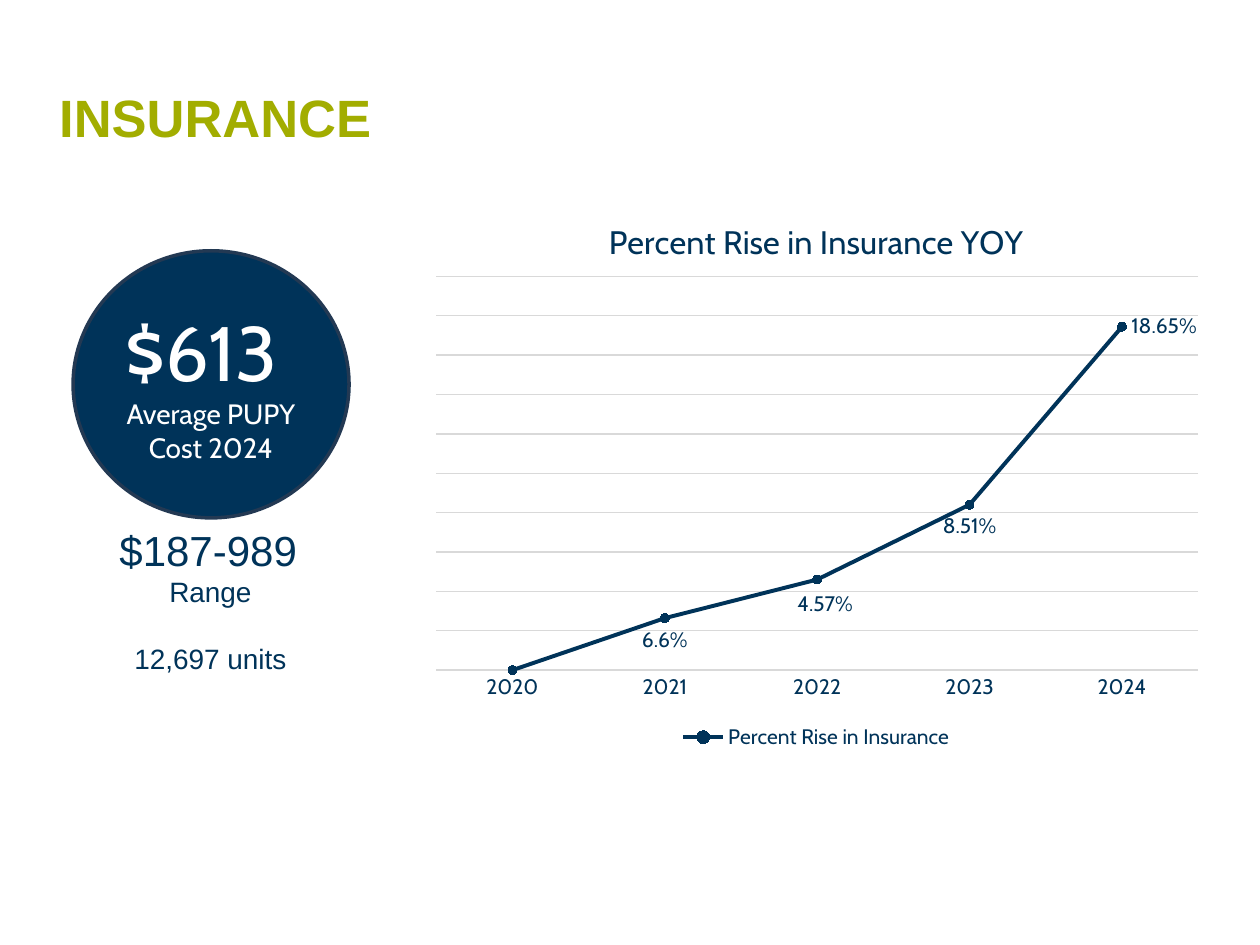
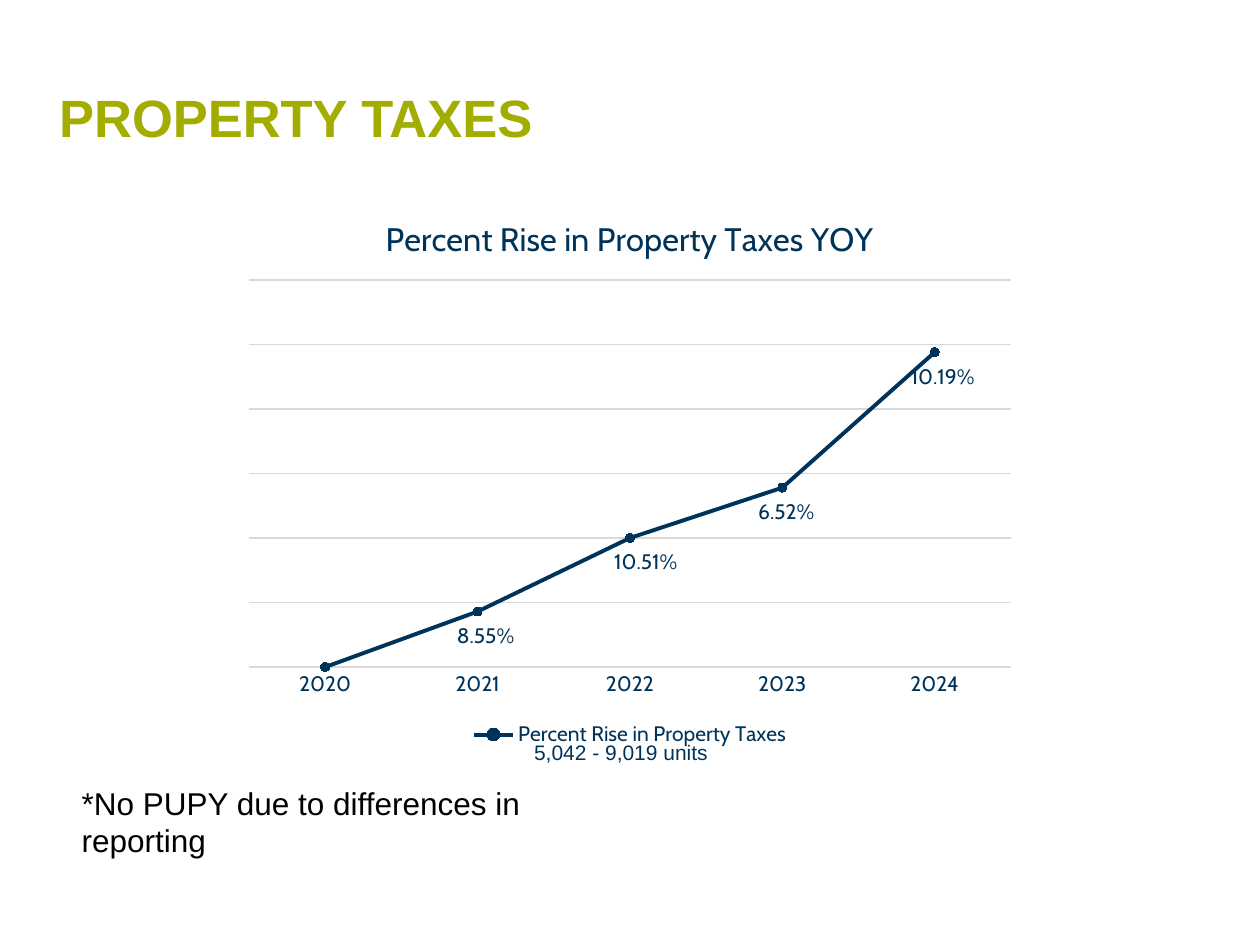
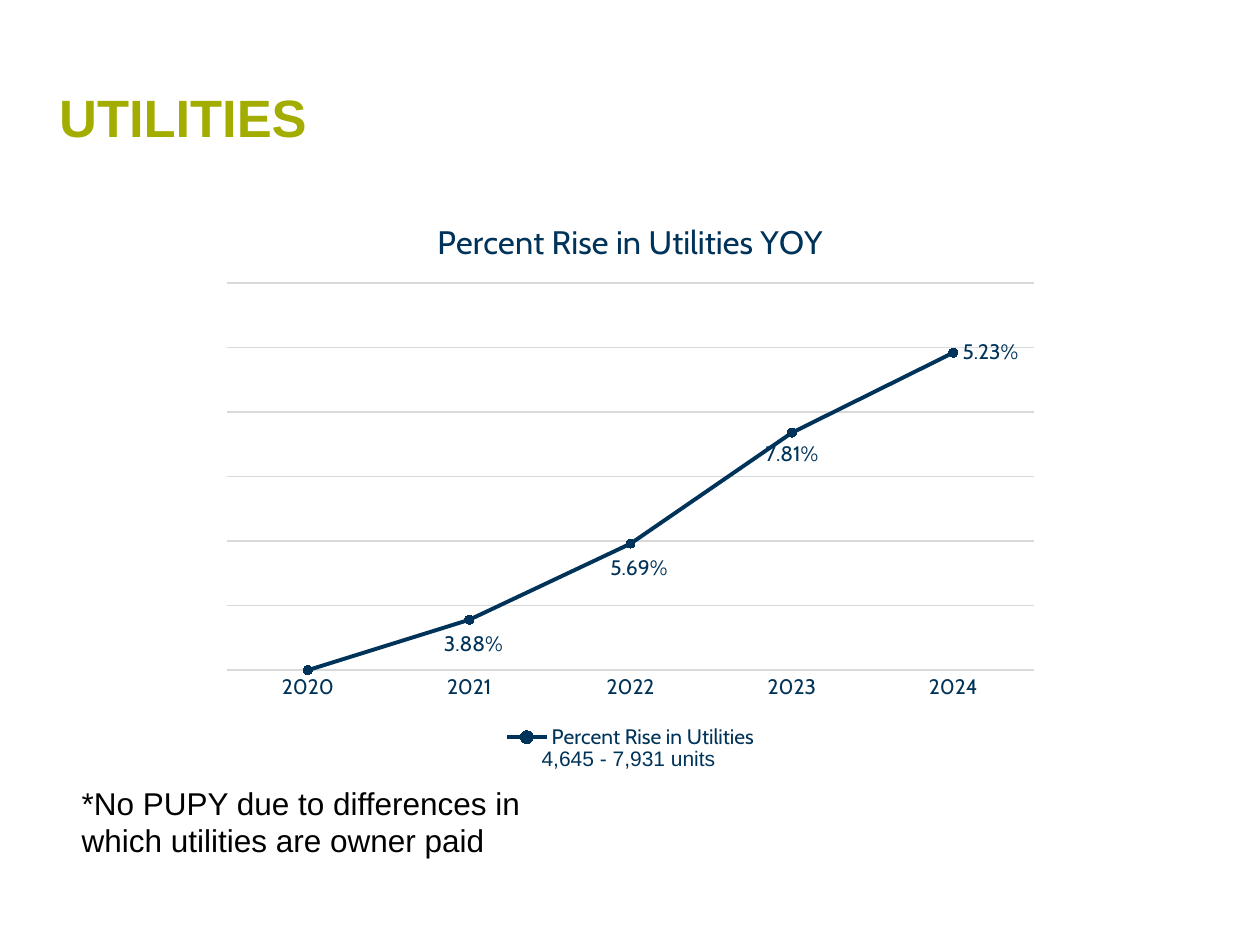
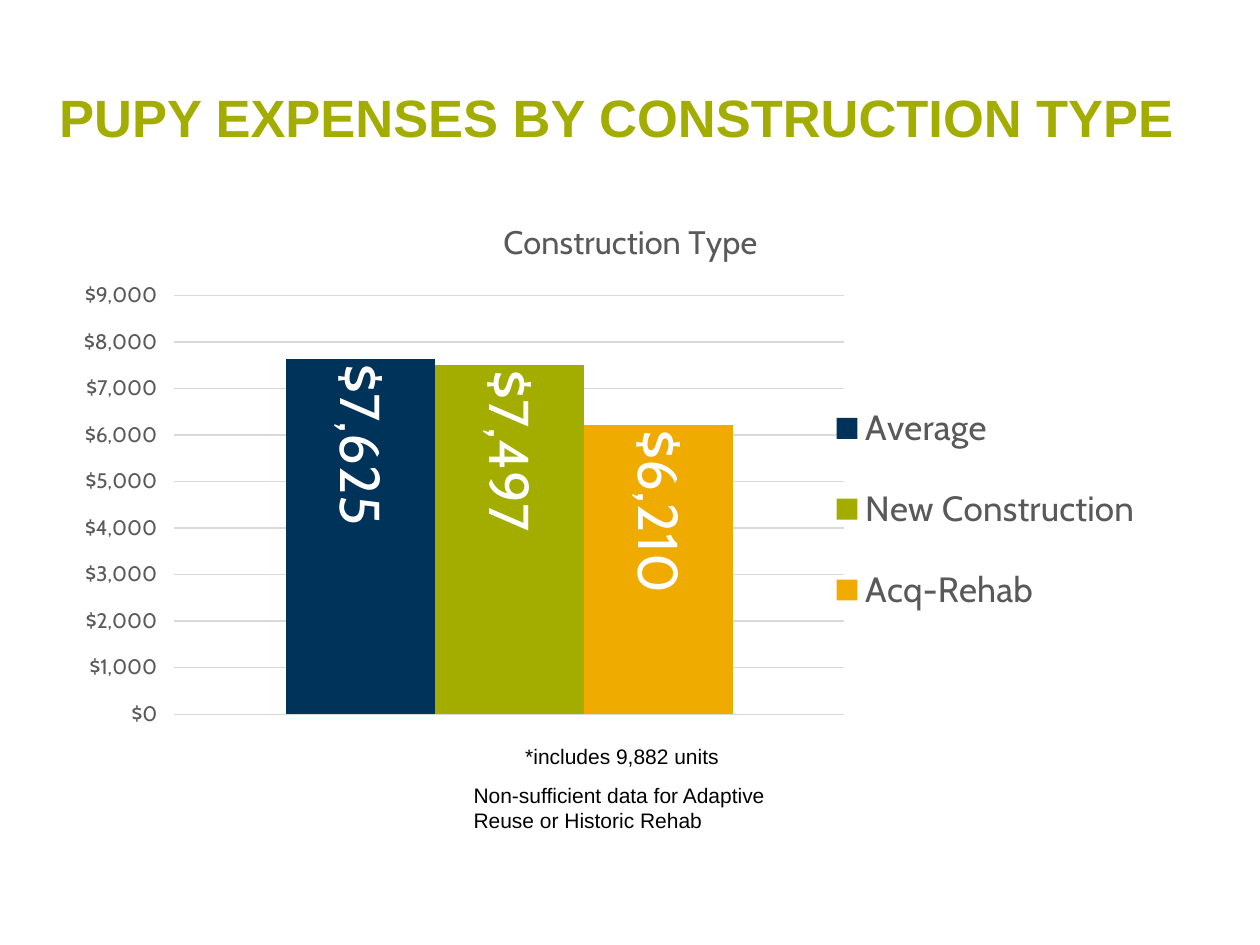
from lxml import etree
from pptx import Presentation
from pptx.chart.data import CategoryChartData
from pptx.dml.color import RGBColor
from pptx.enum.chart import XL_CHART_TYPE, XL_LABEL_POSITION, XL_LEGEND_POSITION, XL_MARKER_STYLE, XL_TICK_MARK
from pptx.enum.shapes import MSO_SHAPE
from pptx.enum.text import MSO_ANCHOR, MSO_AUTO_SIZE, PP_ALIGN
from pptx.oxml.ns import qn
from pptx.util import Inches, Pt

NAVY, LIME, AMBER = "003359", "A2AD00", "F0AB00"
GRAY, GRID, BLACK, WHITE, EDGE = "595959", "D9D9D9", "000000", "FFFFFF", "233953"
HEADING_FONT, CHART_FONT = "Arial", "Cabin"
YEARS = ["2020", "2021", "2022", "2023", "2024"]
DOLLARS = '"$"#,##0_);[Red]\\("$"#,##0\\)'
BELOW, RIGHT = XL_LABEL_POSITION.BELOW, XL_LABEL_POSITION.RIGHT
LEFT, CENTER = PP_ALIGN.LEFT, PP_ALIGN.CENTER


def style(target, color, **values):
    target.color.rgb = RGBColor.from_string(color)
    for name, value in values.items():
        setattr(target, name, value)


def place(parent, index, settings, **fractions):
    for old_layout in parent.findall(qn("c:layout")):
        parent.remove(old_layout)
    layout = etree.Element(qn("c:layout"))
    manual = etree.SubElement(layout, qn("c:manualLayout"))
    for name, value in {**settings, **fractions}.items():
        etree.SubElement(manual, qn(f"c:{name}"), val=str(value))
    parent.insert(index, layout)


FROM_EDGE = {"xMode": "edge", "yMode": "edge"}
INNER_PLOT = {"layoutTarget": "inner", **FROM_EDGE}

pages = [
    {
        "title": "INSURANCE", "chart_title": "Percent Rise in Insurance YOY",
        "box": (3.33, 1.55, 6.3, 4.44), "plot": (0.021, 0.145, 0.96, 0.704),
        "series": [("Percent Rise in Insurance", [0, 0.066, 0.115, 0.21, 0.436], NAVY)],
        "labels": [("6.6%", 0), ("4.57%", 0.01), ("8.51%", 0), ("18.65%", 0)],
        "last_label": RIGHT, "maximum": 0.5, "step": 0.05,
        "notes": [((0.85, 4.11, 1.64, 1.31), NAVY,
                   [("$187-989", 24, 0), ("Range", 16, 0), ("12,697 units", 16, 19)])],
    },
    {
        "title": "PROPERTY TAXES", "chart_title": "Percent Rise in Property Taxes YOY",
        "box": (1.85, 1.53, 6.3, 4.44), "plot": (0.02, 0.156, 0.96, 0.692),
        "series": [("Percent Rise in Property Taxes", [0, 0.086, 0.2, 0.278, 0.488], NAVY)],
        "labels": [("8.55%", 0.01), ("10.51%", 0.02), ("6.52%", 0.005), ("10.19%", 0.01)],
        "last_label": BELOW, "maximum": 0.6, "step": 0.1,
        "notes": [((4.14, 5.82, 1.59, 0.3), NAVY, [("5,042 - 9,019 units", 12, 0)]),
                  ((0.55, 6.17, 4.32, 0.71), BLACK,
                   [("*No PUPY due to differences in reporting", 18, 0)])],
    },
    {
        "title": "UTILITIES", "chart_title": "Percent Rise in Utilities YOY",
        "box": (1.67, 1.55, 6.67, 4.44), "plot": (0.02, 0.157, 0.96, 0.692),
        "series": [("Percent Rise in Utilities", [0, 0.039, 0.098, 0.184, 0.246], NAVY)],
        "labels": [("3.88%", 0.005), ("5.69%", 0.01), ("7.81%", 0), ("5.23%", 0)],
        "last_label": RIGHT, "maximum": 0.3, "step": 0.05,
        "notes": [((0.55, 6.17, 4.32, 0.71), BLACK,
                   [("*No PUPY due to differences in which utilities are owner paid", 18, 0)]),
                  ((4.2, 5.87, 1.59, 0.3), NAVY, [("4,645 - 7,931 units", 12, 0)])],
    },
    {
        "title": "PUPY EXPENSES BY CONSTRUCTION TYPE", "chart_title": "Construction Type",
        "box": (0.49, 1.55, 9.03, 4.3), "plot": (0.099, 0.185, 0.589, 0.773),
        "series": [("Average", [7625], NAVY), ("New Construction", [7497], LIME),
                   ("Acq-Rehab", [6210], AMBER)],
        "labels": None, "maximum": 9000, "step": 1000,
        "notes": [((4.07, 5.85, 1.75, 0.3), BLACK, [("*includes 9,882 units", 12, 0)]),
                  ((3.66, 6.16, 2.55, 0.5), BLACK,
                   [("Non-sufficient data for Adaptive Reuse or Historic Rehab", 12, 0)])],
    },
]

presentation = Presentation()
presentation.slide_width, presentation.slide_height = Inches(10), Inches(7.5)

for page in pages:
    slide = presentation.slides.add_slide(presentation.slide_layouts[5])
    title = slide.shapes.title
    title.left, title.top, title.width, title.height = map(Inches, (0.37, 0.3, 9.15, 1.25))
    title.text_frame.text = page["title"]
    title.text_frame.vertical_anchor = MSO_ANCHOR.MIDDLE
    title.text_frame.paragraphs[0].alignment = LEFT
    style(title.text_frame.paragraphs[0].font, LIME, name=HEADING_FONT, size=Pt(30), bold=True)

    is_line = page["labels"] is not None
    text_color = NAVY if is_line else GRAY
    chart_data = CategoryChartData(number_format="0.0%" if is_line else DOLLARS)
    chart_data.categories = YEARS if is_line else ["1"]
    for name, values, color in page["series"]:
        chart_data.add_series(name, values)
    chart_type = XL_CHART_TYPE.LINE_MARKERS if is_line else XL_CHART_TYPE.COLUMN_CLUSTERED
    chart = slide.shapes.add_chart(chart_type, *map(Inches, page["box"]), chart_data).chart
    style(chart.font, NAVY if is_line else BLACK, name=CHART_FONT, size=Pt(10))

    chart.has_title = True
    chart.chart_title.text_frame.text = page["chart_title"]
    style(chart.chart_title.text_frame.paragraphs[0].runs[0].font, text_color,
          name=CHART_FONT, size=Pt(18.6), bold=False)
    chart.has_legend = True
    chart.legend.position = XL_LEGEND_POSITION.BOTTOM if is_line else XL_LEGEND_POSITION.RIGHT
    chart.legend.include_in_layout = False
    style(chart.legend.font, text_color, name=CHART_FONT, size=Pt(12 if is_line else 20))

    plot_area = chart._chartSpace.chart.plotArea
    place(plot_area, 0, INNER_PLOT, **dict(zip("xywh", page["plot"])))

    value_axis, category_axis = chart.value_axis, chart.category_axis
    value_axis.minimum_scale, value_axis.maximum_scale = 0, page["maximum"]
    value_axis.major_unit = page["step"]
    value_axis.has_major_gridlines = True
    style(value_axis.major_gridlines.format.line, GRID, width=Pt(0.75))
    value_axis.visible, category_axis.visible = not is_line, is_line
    plot = chart.plots[0]
    plot.vary_by_categories = False

    if is_line:
        category_axis.major_tick_mark = XL_TICK_MARK.NONE
        style(category_axis.format.line, GRID, width=Pt(0.75))
        style(category_axis.tick_labels.font, NAVY, name=CHART_FONT, size=Pt(12))
        series = plot.series[0]
        series.smooth = False
        style(series.format.line, NAVY, width=Pt(2.25))
        series.marker.style, series.marker.size = XL_MARKER_STYLE.CIRCLE, 5
        series.marker.format.fill.solid()
        series.marker.format.fill.fore_color.rgb = RGBColor.from_string(NAVY)
        style(series.marker.format.line, NAVY)
        labels = series.data_labels
        labels.show_value = True
        style(labels.font, NAVY, name=CHART_FONT, size=Pt(12))
        for index, (text, shift) in enumerate(page["labels"], 1):
            label = series.points[index].data_label
            label.text_frame.text = text
            style(label.text_frame.paragraphs[0].runs[0].font, NAVY, name=CHART_FONT, size=Pt(12))
            label.position = page["last_label"] if index == len(page["labels"]) else BELOW
            if shift:
                place(labels._element.findall(qn("c:dLbl"))[-1], 1, {}, x=shift, y=0.005)
        hidden_label = etree.Element(qn("c:dLbl"))
        etree.SubElement(hidden_label, qn("c:idx"), val="0")
        etree.SubElement(hidden_label, qn("c:delete"), val="1")
        labels._element.insert(0, hidden_label)
    else:
        place(chart.legend._element, 1, FROM_EDGE, x=0.662, y=0.321, w=0.3, h=0.517)
        value_axis.format.line.fill.background()
        value_axis.tick_labels.number_format = DOLLARS
        value_axis.tick_labels.number_format_is_linked = False
        style(value_axis.tick_labels.font, GRAY, name=CHART_FONT, size=Pt(12))
        plot.gap_width, plot.overlap = 150, 0
        for series, (name, values, color) in zip(plot.series, page["series"]):
            series.format.fill.solid()
            series.format.fill.fore_color.rgb = RGBColor.from_string(color)
            labels = series.data_labels
            style(labels.font, WHITE, name=CHART_FONT, size=Pt(32))
            labels.show_value = True
            labels.number_format, labels.number_format_is_linked = DOLLARS, False
            labels.position = XL_LABEL_POSITION.INSIDE_END
            labels._element.find(f"{qn('c:txPr')}/{qn('a:bodyPr')}").set("rot", "5400000")

    for box, color, lines in page["notes"]:
        text_frame = slide.shapes.add_textbox(*map(Inches, box)).text_frame
        text_frame.word_wrap = True
        text_frame.auto_size = MSO_AUTO_SIZE.SHAPE_TO_FIT_TEXT
        for index, (text, size, space_before) in enumerate(lines):
            paragraph = text_frame.add_paragraph() if index else text_frame.paragraphs[0]
            paragraph.text = text
            paragraph.alignment = CENTER if index else LEFT
            if space_before:
                paragraph.space_before = Pt(space_before)
            style(paragraph.font, color, name=HEADING_FONT, size=Pt(size))

circle = presentation.slides[0].shapes.add_shape(
    MSO_SHAPE.OVAL, Inches(0.58), Inches(1.99), Inches(2.19), Inches(2.12))
circle.shadow.inherit = False
circle.fill.solid()
circle.fill.fore_color.rgb = RGBColor.from_string(NAVY)
style(circle.line, EDGE, width=Pt(2))
circle.text_frame.word_wrap = True
circle.text_frame.vertical_anchor = MSO_ANCHOR.MIDDLE
circle.text_frame.text = "$613\nAverage PUPY Cost 2024"
for paragraph, size, alignment in zip(circle.text_frame.paragraphs, (44, 16), (LEFT, CENTER)):
    paragraph.alignment = alignment
    style(paragraph.font, WHITE, name=CHART_FONT, size=Pt(size))

presentation.save("out.pptx")
